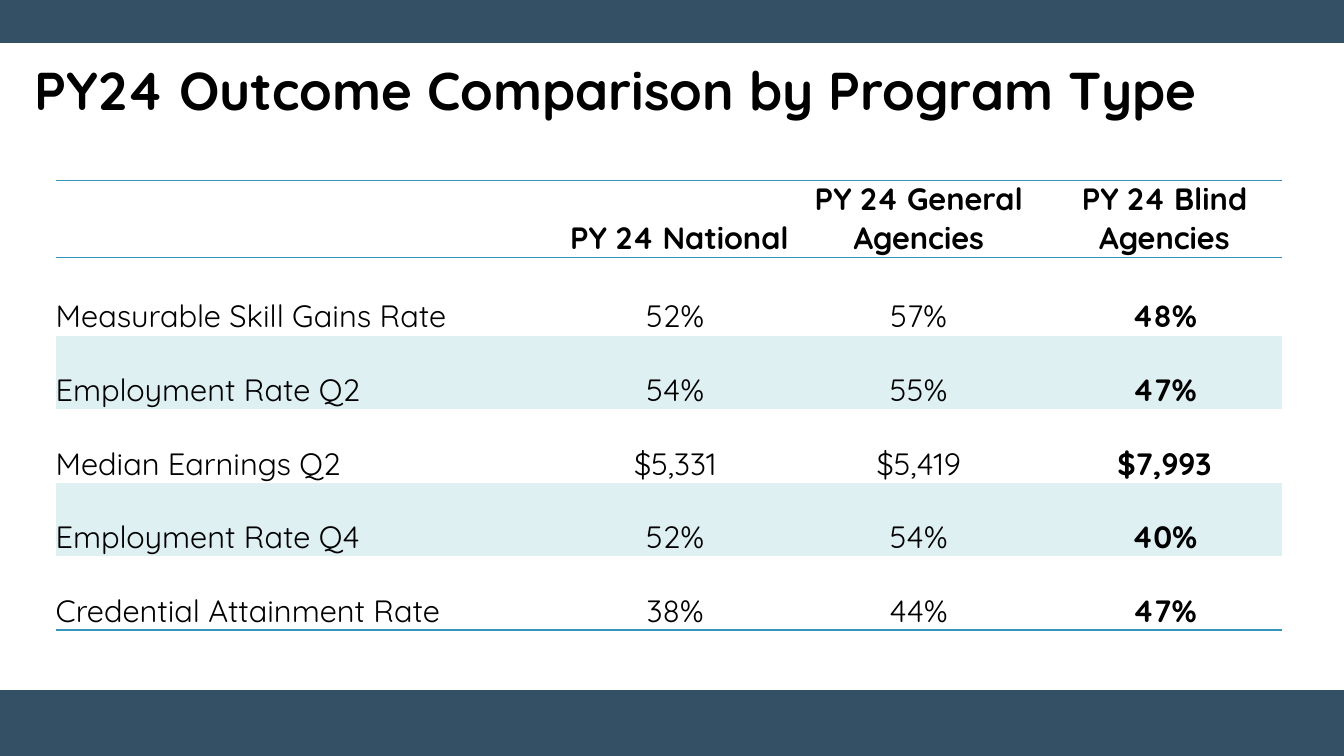
import pptx
import pptx.util
import pptx.dml.color
import pptx.enum.shapes
import pptx.enum.text
import pptx.oxml
import pptx.oxml.ns
import lxml.etree

Pt = pptx.util.Pt
RGB = pptx.dml.color.RGBColor
ALIGN = pptx.enum.text.PP_ALIGN
ANCHOR = pptx.enum.text.MSO_ANCHOR
qn = pptx.oxml.ns.qn

TITLE = "PY24 Outcome Comparison by Program Type"
ROWS = [
    ["", " PY 24 National", "PY 24 General Agencies", "PY 24 Blind Agencies"],
    ["Measurable Skill Gains Rate", "52%", "57%", "48%"],
    ["Employment Rate Q2", "54%", "55%", "47%"],
    ["Median Earnings Q2", "$5,331", "$5,419", "$7,993"],
    ["Employment Rate Q4", "52%", "54%", "40%"],
    ["Credential Attainment Rate", "38%", "44%", "47%"],
]
WIDTHS = [360, 165, 183, 168]
HEIGHTS = [53.5, 56] + [52.6] * 4
BANDS = [(493.2, 46.8), (0, 30.24)]
WIDE, HIGH = 960, 540
FONT = "Quicksand"
PLAIN_STYLE = "{2D5ABB26-0587-4C30-8999-92F81FD0307C}"
NAVY = RGB(0x34, 0x50, 0x65)
TEAL = RGB(0x34, 0x94, 0xBA)
PALE = RGB(0xDE, 0xF0, 0xF2)
BLACK = RGB(0, 0, 0)


def set_font(para, size, bold):
    font = para.font
    font.name = FONT
    font.size = Pt(size)
    font.bold = bold
    font.color.rgb = BLACK


def add_edge(cell, side):
    props = cell._tc.get_or_add_tcPr()
    line = lxml.etree.SubElement(props, qn("a:" + side), w=str(Pt(1)))
    fill = lxml.etree.SubElement(line, qn("a:solidFill"))
    lxml.etree.SubElement(fill, qn("a:srgbClr"), val=str(TEAL))


def add_bands(slide):
    for top, high in BANDS:
        band = slide.shapes.add_shape(
            pptx.enum.shapes.MSO_SHAPE.RECTANGLE, 0, Pt(top), Pt(WIDE), Pt(high))
        band.shadow.inherit = False
        band.fill.solid()
        band.fill.fore_color.rgb = NAVY
        band.line.color.rgb = NAVY
        band.line.width = Pt(1)


def add_title(slide):
    title = slide.shapes.title
    title.left, title.top = Pt(17.3), Pt(32.4)
    title.width, title.height = Pt(931.7), Pt(69.1)
    frame = title.text_frame
    frame.text = TITLE
    frame.word_wrap = True
    frame.auto_size = pptx.enum.text.MSO_AUTO_SIZE.NONE
    frame.vertical_anchor = ANCHOR.MIDDLE
    para = frame.paragraphs[0]
    para.alignment = ALIGN.LEFT
    para.line_spacing = 0.9
    set_font(para, 38, True)


def fill_cell(cell, text, row, col):
    cell.margin_left = cell.margin_right = 0
    cell.margin_top = cell.margin_bottom = 0
    cell.vertical_anchor = ANCHOR.BOTTOM
    cell.text = text
    para = cell.text_frame.paragraphs[0]
    para.alignment = ALIGN.CENTER if col else ALIGN.LEFT
    set_font(para, 22, row == 0 or col == len(WIDTHS) - 1)
    if row == 0:
        add_edge(cell, "lnT")
    if row in (0, len(ROWS) - 1):
        add_edge(cell, "lnB")
    if row and row % 2 == 0:
        cell.fill.solid()
        cell.fill.fore_color.rgb = PALE
    else:
        cell.fill.background()


def add_grid(slide):
    frame = slide.shapes.add_table(
        len(ROWS), len(WIDTHS), Pt(39.8), Pt(128.7),
        Pt(sum(WIDTHS)), Pt(sum(HEIGHTS)))
    table = frame.table
    table.horz_banding = False
    next(frame.element.iter(qn("a:tableStyleId"))).text = PLAIN_STYLE
    for col, width in enumerate(WIDTHS):
        table.columns[col].width = Pt(width)
    for row, texts in enumerate(ROWS):
        table.rows[row].height = Pt(HEIGHTS[row])
        for col, text in enumerate(texts):
            fill_cell(table.cell(row, col), text, row, col)


def main():
    deck = pptx.Presentation()
    deck.slide_width, deck.slide_height = Pt(WIDE), Pt(HIGH)
    slide = deck.slides.add_slide(deck.slide_layouts[5])
    add_bands(slide)
    add_title(slide)
    add_grid(slide)
    deck.save("out.pptx")


if __name__ == "__main__":
    main()
